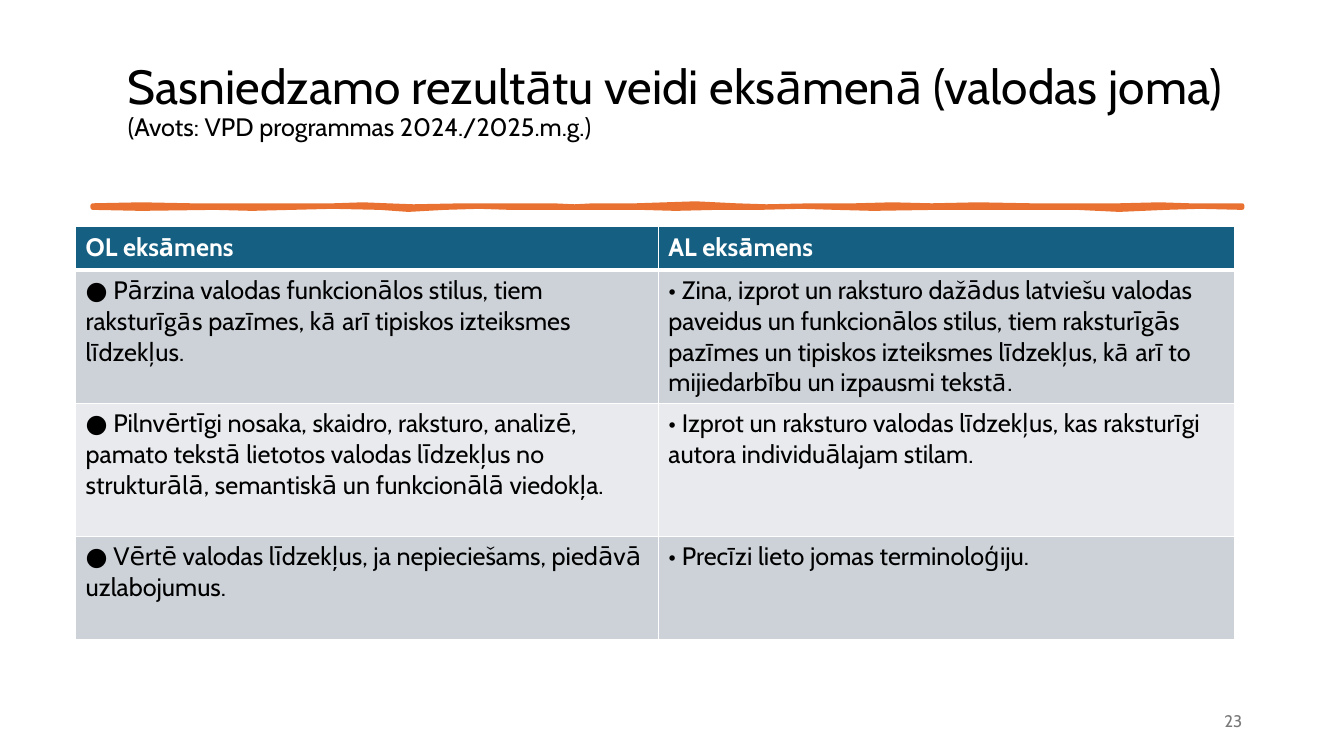
from dataclasses import dataclass

from lxml.etree import SubElement
from pptx import Presentation
from pptx.dml.color import RGBColor
from pptx.enum.text import MSO_ANCHOR, PP_ALIGN
from pptx.oxml.ns import qn
from pptx.slide import Slide
from pptx.table import _Cell
from pptx.text.text import _Paragraph
from pptx.util import Inches, Pt

FONT = "Cabin"
COLORS = {
    "text": "000000",
    "white": "FFFFFF",
    "header": "156082",
    "odd_row": "CCD2D8",
    "even_row": "E8EAED",
    "stroke": "E97132",
    "number": "797979",
}
COLUMN_WIDTHS = (5.78, 5.72)
STROKE_TOP = (
    (0.92, 2.04), (1.4, 2.03), (1.9, 2.04), (3.31, 2.04), (3.6, 2.03),
    (3.84, 2.04), (4.1, 2.05), (4.6, 2.04), (5.48, 2.04), (5.7, 2.05),
    (5.89, 2.04), (6.31, 2.04), (6.9, 2.02), (7.3, 2.04), (7.6, 2.05),
    (8.06, 2.04), (8.48, 2.04), (8.85, 2.03), (9.24, 2.04), (9.7, 2.03),
    (10.23, 2.04), (11.1, 2.04), (11.5, 2.03), (11.8, 2.04), (12.32, 2.04),
)
STROKE_BOTTOM = (
    (12.32, 2.06), (11.9, 2.05), (11.56, 2.06), (11.1, 2.08), (10.68, 2.06),
    (10.25, 2.06), (9.81, 2.06), (9.28, 2.06), (8.66, 2.07), (8.29, 2.06),
    (7.95, 2.05), (7.53, 2.06), (7.11, 2.06), (6.7, 2.07), (6.35, 2.06),
    (5.7, 2.06), (5.06, 2.06), (4.75, 2.05), (4.41, 2.06), (4.05, 2.08),
    (3.77, 2.06), (3.3, 2.05), (2.89, 2.06), (2.5, 2.07), (2.13, 2.06),
    (1.4, 2.07), (0.92, 2.06),
)


@dataclass(frozen=True)
class ExamRow:
    height: float
    basic: str
    advanced: str
    fill: str
    color: str = "text"
    bold: bool = False
    top_border: float = 1
    bottom_border: float = 1


@dataclass(frozen=True)
class Phrase:
    text: str
    size: float
    color: str = "text"
    bold: bool = False


@dataclass(frozen=True)
class TextArea:
    left: float
    top: float
    width: float
    height: float
    phrases: tuple[Phrase, ...]
    align: PP_ALIGN = PP_ALIGN.LEFT
    line_spacing: float = 1.0


EXAM_ROWS = (
    ExamRow(0.43, "OL eksāmens", "AL eksāmens", "header", "white", True,
            bottom_border=3),
    ExamRow(
        1.32,
        "● Pārzina valodas funkcionālos stilus, tiem raksturīgās pazīmes, "
        "kā arī tipiskos izteiksmes līdzekļus.",
        "• Zina, izprot un raksturo dažādus latviešu valodas paveidus un "
        "funkcionālos stilus, tiem raksturīgās pazīmes un tipiskos izteiksmes "
        "līdzekļus, kā arī to mijiedarbību un izpausmi tekstā.",
        "odd_row",
        top_border=3,
    ),
    ExamRow(
        1.32,
        "● Pilnvērtīgi nosaka, skaidro, raksturo, analizē, pamato tekstā "
        "lietotos valodas līdzekļus no strukturālā, semantiskā un "
        "funkcionālā viedokļa.",
        "• Izprot un raksturo valodas līdzekļus, kas raksturīgi autora "
        "individuālajam stilam.",
        "even_row",
    ),
    ExamRow(
        1.03,
        "● Vērtē valodas līdzekļus, ja nepieciešams, piedāvā uzlabojumus.",
        "• Precīzi lieto jomas terminoloģiju.",
        "odd_row",
    ),
)
TITLE = TextArea(
    1.17, 0.4, 11.24, 1.23,
    (
        Phrase("Sasniedzamo rezultātu veidi eksāmenā (valodas joma) ", 34.2),
        Phrase("(Avots: VPD programmas 2024./2025.m.g.)", 18),
    ),
    line_spacing=0.9,
)
PAGE_NUMBER = TextArea(
    9.42, 6.95, 3, 0.4, (Phrase("23", 12, "number"),), PP_ALIGN.RIGHT
)


def rgb(name: str) -> RGBColor:
    return RGBColor.from_string(COLORS[name])


def add_phrase(paragraph: _Paragraph, phrase: Phrase) -> None:
    run = paragraph.add_run()
    run.text = phrase.text
    run.font.name = FONT
    run.font.size = Pt(phrase.size)
    run.font.bold = phrase.bold
    run.font.color.rgb = rgb(phrase.color)


def add_text_area(slide: Slide, area: TextArea) -> None:
    box = slide.shapes.add_textbox(
        Inches(area.left), Inches(area.top), Inches(area.width), Inches(area.height)
    )
    frame = box.text_frame
    frame.word_wrap = True
    frame.vertical_anchor = MSO_ANCHOR.MIDDLE
    paragraph = frame.paragraphs[0]
    paragraph.alignment = area.align
    paragraph.line_spacing = area.line_spacing
    for phrase in area.phrases:
        add_phrase(paragraph, phrase)


def add_brush_stroke(slide: Slide) -> None:
    start, *rest = [
        (Inches(x), Inches(y)) for x, y in STROKE_TOP + STROKE_BOTTOM
    ]
    builder = slide.shapes.build_freeform(*start)
    builder.add_line_segments(rest, close=True)
    stroke = builder.convert_to_shape()
    stroke.shadow.inherit = False
    stroke.fill.solid()
    stroke.fill.fore_color.rgb = rgb("stroke")
    stroke.line.color.rgb = rgb("stroke")
    stroke.line.width = Pt(3.25)
    SubElement(stroke.line._get_or_add_ln(), qn("a:round"))


def set_borders(cell: _Cell, row: ExamRow) -> None:
    properties = cell._tc.get_or_add_tcPr()
    widths = {"lnL": 1, "lnR": 1, "lnT": row.top_border, "lnB": row.bottom_border}
    for side, width in widths.items():
        border = SubElement(properties, qn(f"a:{side}"), w=str(Pt(width)))
        fill = SubElement(border, qn("a:solidFill"))
        SubElement(fill, qn("a:srgbClr"), val=COLORS["white"])


def add_exam_table(slide: Slide) -> None:
    table = slide.shapes.add_table(
        len(EXAM_ROWS), len(COLUMN_WIDTHS), Inches(0.75), Inches(2.25),
        Inches(sum(COLUMN_WIDTHS)), Inches(sum(row.height for row in EXAM_ROWS)),
    ).table
    for column, width in zip(table.columns, COLUMN_WIDTHS):
        column.width = Inches(width)
    for index, row in enumerate(EXAM_ROWS):
        table.rows[index].height = Inches(row.height)
        for cell, text in zip(table.rows[index].cells, (row.basic, row.advanced)):
            set_borders(cell, row)
            cell.fill.solid()
            cell.fill.fore_color.rgb = rgb(row.fill)
            add_phrase(
                cell.text_frame.paragraphs[0], Phrase(text, 18, row.color, row.bold)
            )


def main() -> None:
    presentation = Presentation()
    presentation.slide_width = Inches(13.33)
    presentation.slide_height = Inches(7.5)
    slide = presentation.slides.add_slide(presentation.slide_layouts[6])
    add_text_area(slide, TITLE)
    add_brush_stroke(slide)
    add_exam_table(slide)
    add_text_area(slide, PAGE_NUMBER)
    presentation.save("out.pptx")


if __name__ == "__main__":
    main()
